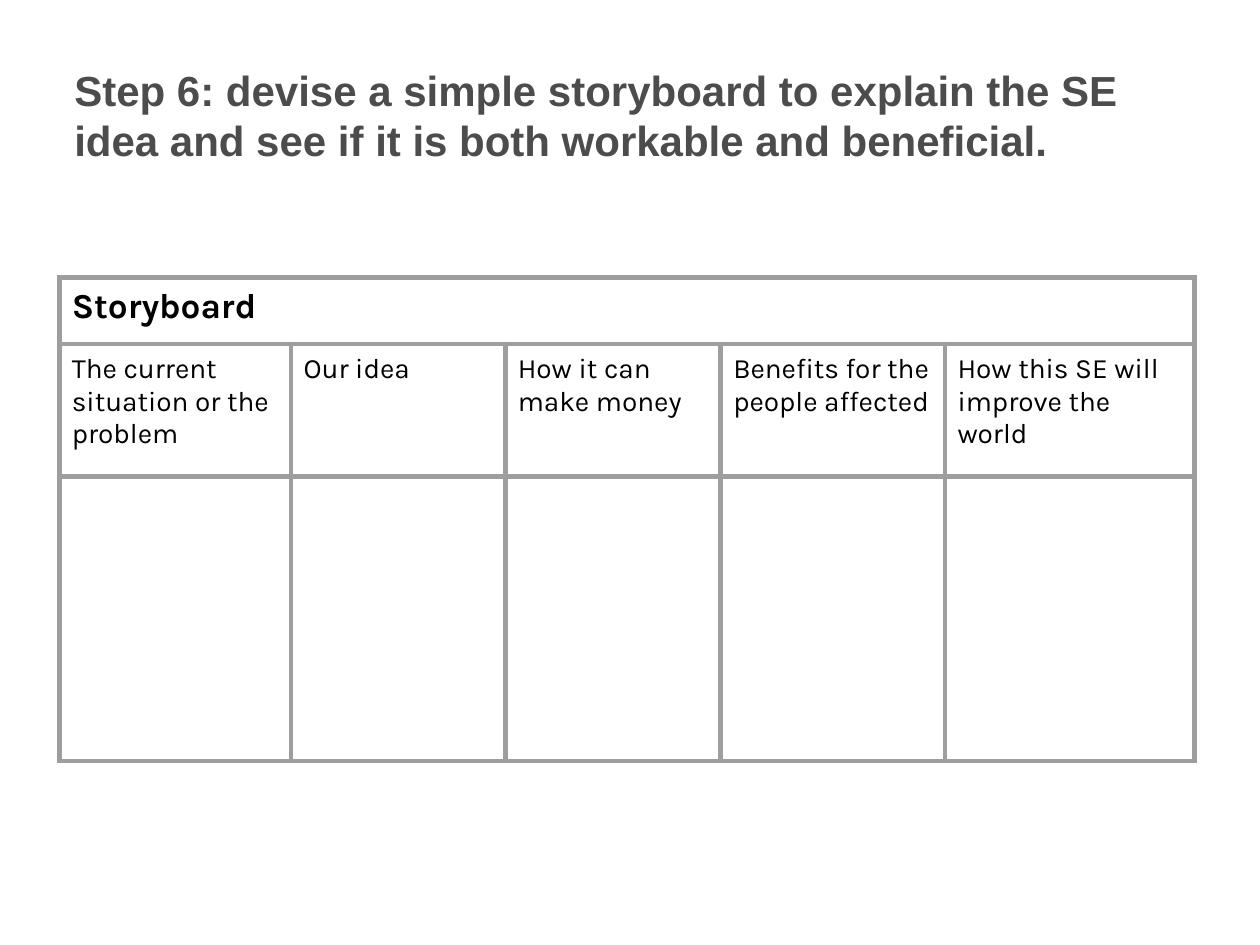
from lxml.etree import SubElement
from pptx import Presentation
from pptx.dml.color import RGBColor
from pptx.enum.text import MSO_ANCHOR, MSO_AUTO_SIZE, PP_ALIGN
from pptx.oxml.ns import qn
from pptx.util import Inches, Pt

TITLE = ("Step 6: devise a simple storyboard to explain the SE idea "
         "and see if it is both workable and beneficial.")
HEADINGS = [
    "The current situation or the problem",
    "Our idea",
    "How it can make money",
    "Benefits for the people affected",
    "How this SE will improve the world",
]
COLUMN_WIDTHS = [1.84, 1.7, 1.71, 1.78, 1.98]
ROW_HEIGHTS = [0.53, 1.05, 2.26]
BORDER_COLOUR = "9E9E9E"


def colour(hex_value):
    return RGBColor.from_string(hex_value)


def write_text(frame, text, font="Karla", size=16, bold=False, fill="000000"):
    paragraph = frame.paragraphs[0]
    paragraph.alignment = PP_ALIGN.LEFT
    span = paragraph.add_run()
    span.text = text
    span.font.name = font
    span.font.size = Pt(size)
    span.font.bold = bold
    span.font.color.rgb = colour(fill)


def add_title(page):
    title = page.shapes.title
    title.left, title.top = Inches(0.49), Inches(0.46)
    title.width, title.height = Inches(8.93), Inches(0.91)
    frame = title.text_frame
    frame.word_wrap = True
    frame.auto_size = MSO_AUTO_SIZE.NONE
    frame.vertical_anchor = MSO_ANCHOR.TOP
    write_text(frame, TITLE, font="Arial", size=24, bold=True, fill="4C4C4C")


def set_borders(cell, hex_value, width):
    properties = cell._tc.get_or_add_tcPr()
    for side in ("a:lnL", "a:lnR", "a:lnT", "a:lnB"):
        line = SubElement(properties, qn(side), w=str(Pt(width)))
        solid = SubElement(line, qn("a:solidFill"))
        SubElement(solid, qn("a:srgbClr"), val=hex_value)


def format_cell(cell):
    cell.margin_left = cell.margin_right = Inches(0.1)
    cell.margin_top = cell.margin_bottom = Inches(0.07)
    cell.vertical_anchor = MSO_ANCHOR.TOP
    set_borders(cell, BORDER_COLOUR, 3)
    cell.fill.background()


def add_storyboard(page):
    table = page.shapes.add_table(
        len(ROW_HEIGHTS), len(COLUMN_WIDTHS), Inches(0.47), Inches(2.2),
        Inches(sum(COLUMN_WIDTHS)), Inches(sum(ROW_HEIGHTS))).table
    table.first_row = table.horz_banding = False
    for column, width in zip(table.columns, COLUMN_WIDTHS):
        column.width = Inches(width)
    for row, height in zip(table.rows, ROW_HEIGHTS):
        row.height = Inches(height)
    for cell in table.iter_cells():
        format_cell(cell)
    table.cell(0, 0).merge(table.cell(0, len(COLUMN_WIDTHS) - 1))
    write_text(table.cell(0, 0).text_frame, "Storyboard", size=20, bold=True)
    for index, heading in enumerate(HEADINGS):
        write_text(table.cell(1, index).text_frame, heading)


def main():
    deck = Presentation()
    deck.slide_width, deck.slide_height = Inches(10), Inches(7.5)
    page = deck.slides.add_slide(deck.slide_layouts[5])
    add_title(page)
    add_storyboard(page)
    deck.save("out.pptx")


if __name__ == "__main__":
    main()
